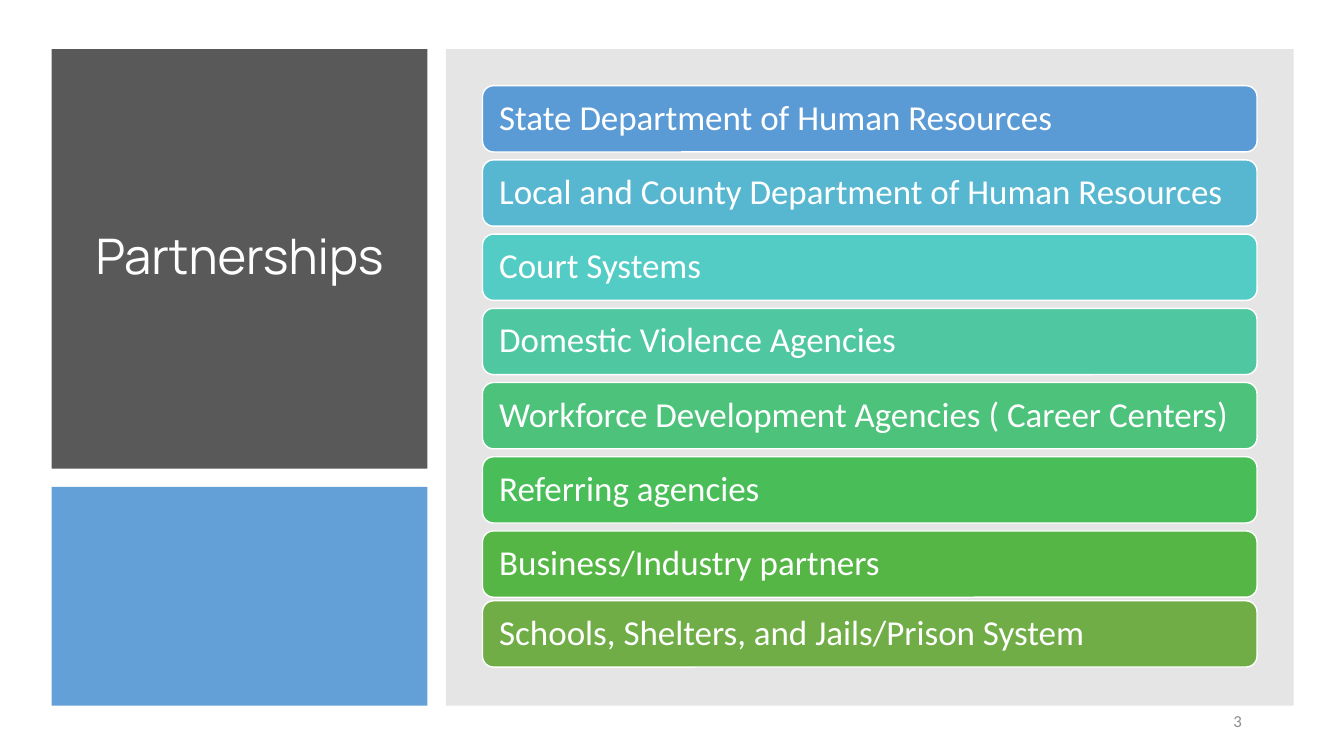
from collections import namedtuple
from dataclasses import dataclass

from lxml import etree
from pptx import Presentation
from pptx.dml.color import RGBColor
from pptx.enum.shapes import MSO_SHAPE
from pptx.enum.text import MSO_ANCHOR, MSO_AUTO_SIZE, PP_ALIGN
from pptx.oxml.ns import qn
from pptx.util import Cm, Pt

RECTANGLE = MSO_SHAPE.RECTANGLE
ROUNDED = MSO_SHAPE.ROUNDED_RECTANGLE
MIDDLE = MSO_ANCHOR.MIDDLE
NO_AUTOFIT = MSO_AUTO_SIZE.NONE
LEFT = PP_ALIGN.LEFT
RIGHT = PP_ALIGN.RIGHT
TITLE_ONLY = 5

Box = namedtuple("Box", "left top width height")


@dataclass(frozen=True)
class Theme:
    heading_font: str = "Manrope"
    body_font: str = "Calibri"
    title_size: int = 35
    bar_size: int = 25
    number_size: int = 12
    white: str = "FFFFFF"
    dark: str = "595959"
    blue: str = "5B9BD5"
    gray: str = "808080"
    number: str = "8C8C8C"


THEME = Theme()

PARTNERS = [
    ("State Department of Human Resources", "5B9BD5"),
    ("Local and County Department of Human Resources", "57B7D1"),
    ("Court Systems", "53CCC5"),
    ("Domestic Violence Agencies", "4FC7A0"),
    ("Workforce Development Agencies ( Career Centers)", "4CC27B"),
    ("Referring agencies", "48BD58"),
    ("Business/Industry partners", "55B646"),
    ("Schools, Shelters, and Jails/Prison System", "70AD47"),
]


def apply_format(target, values):
    for name, value in values.items():
        setattr(target, name, value)


def place(box):
    return [Cm(length) for length in box]


def add_block(slide, kind, box, color, opacity=100):
    shape = slide.shapes.add_shape(kind, *place(box))
    shape.shadow.inherit = False
    shape.fill.solid()
    shape.fill.fore_color.rgb = RGBColor.from_string(color)
    shape.line.fill.background()
    if opacity < 100:
        color_element = shape.fill._xPr.find(qn("a:solidFill"))[0]
        alpha = etree.SubElement(color_element, qn("a:alpha"))
        alpha.set("val", str(opacity * 1000))
    return shape


def write_text(shape, text, font, size, color, alignment=LEFT, spacing=0.9, inset=0.25):
    frame = shape.text_frame
    frame.text = text
    apply_format(frame, {
        "word_wrap": True,
        "auto_size": NO_AUTOFIT,
        "vertical_anchor": MIDDLE,
        "margin_left": Cm(inset),
        "margin_right": Cm(inset),
    })
    paragraph = frame.paragraphs[0]
    apply_format(paragraph, {"alignment": alignment, "line_spacing": spacing})
    run_font = paragraph.runs[0].font
    apply_format(run_font, {"name": font, "size": Pt(size)})
    run_font.color.rgb = RGBColor.from_string(color)


def add_title_panel(slide, box):
    add_block(slide, RECTANGLE, box, THEME.dark)
    title = slide.shapes.title
    title_box = Box(box.left + 0.86, box.top + 0.79, 7.9, box.height - 1.58)
    apply_format(title, dict(zip(Box._fields, place(title_box))))
    write_text(title, "Partnerships", THEME.heading_font, THEME.title_size, THEME.white)
    slide.shapes._spTree.append(title._element)


def add_partner_panel(slide, box):
    add_block(slide, RECTANGLE, box, THEME.gray, opacity=20)
    margin, height, gap, last_gap = 0.92, 1.67, 0.2, 0.09
    top = box.top + margin
    for index, (partner, color) in enumerate(PARTNERS):
        bar_box = Box(box.left + margin, top, box.width - 2 * margin, height)
        bar = add_block(slide, ROUNDED, bar_box, color)
        bar.line.color.rgb = RGBColor.from_string(THEME.white)
        bar.line.width = Pt(1)
        write_text(bar, partner, THEME.body_font, THEME.bar_size, THEME.white, inset=0.34)
        next_is_last = index == len(PARTNERS) - 2
        top += height + (last_gap if next_is_last else gap)


def add_slide_number(slide, box):
    number = slide.shapes.add_textbox(*place(box))
    write_text(number, "3", THEME.body_font, THEME.number_size, THEME.number, RIGHT, 1.0)


def add_partnerships_slide(presentation):
    slide = presentation.slides.add_slide(presentation.slide_layouts[TITLE_ONLY])
    add_title_panel(slide, Box(1.3, 1.24, 9.47, 10.57))
    add_block(slide, RECTANGLE, Box(1.3, 12.27, 9.47, 5.51), THEME.blue, opacity=95)
    add_partner_panel(slide, Box(11.24, 1.24, 21.36, 16.54))
    add_slide_number(slide, Box(23.93, 17.65, 7.62, 1.02))


def main():
    presentation = Presentation()
    apply_format(presentation, {"slide_width": Cm(33.87), "slide_height": Cm(19.05)})
    add_partnerships_slide(presentation)
    presentation.save("out.pptx")


if __name__ == "__main__":
    main()
